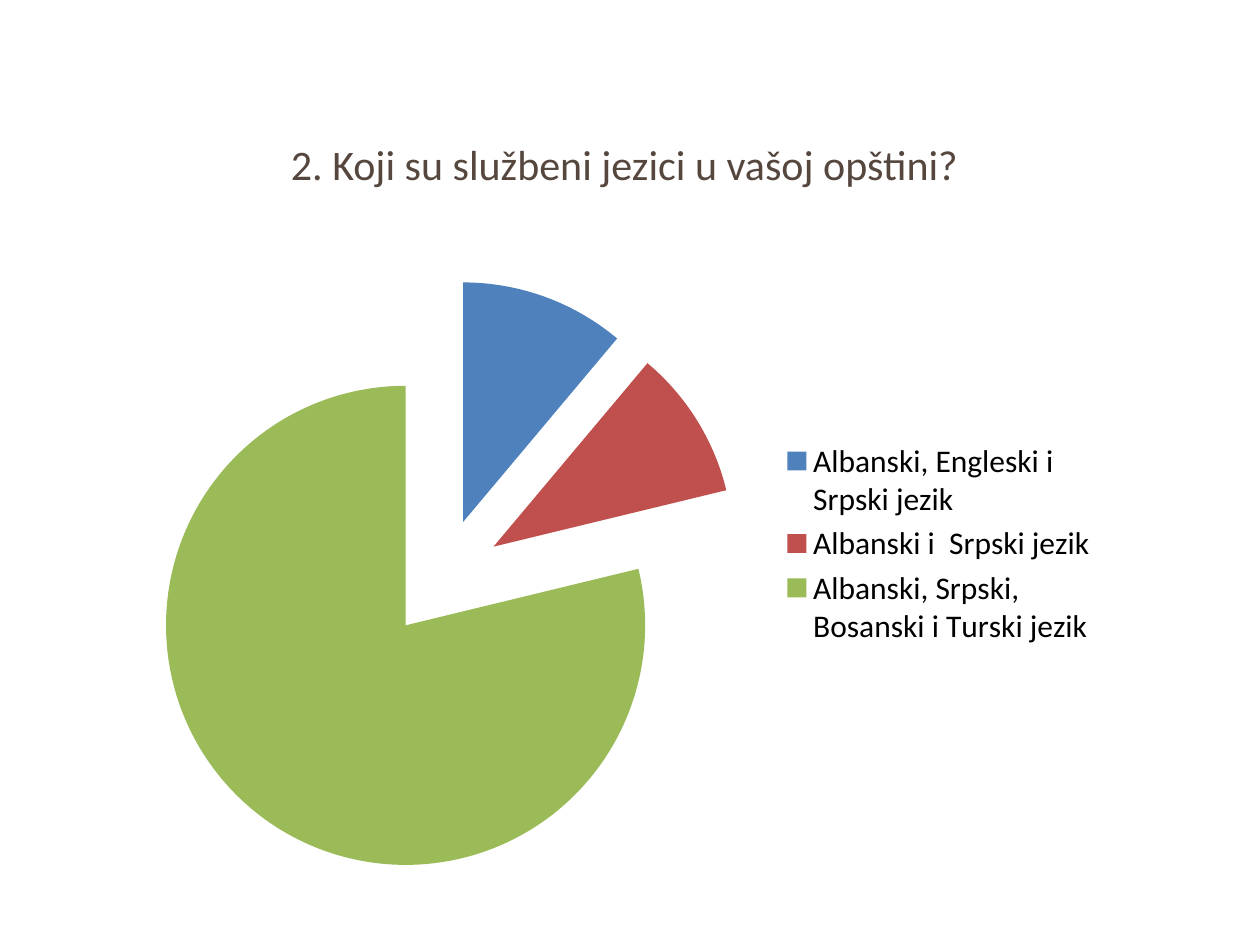
"""Build a survey slide with a question and an exploded pie chart of its answers."""
from pptx import Presentation
from pptx.chart.data import CategoryChartData
from pptx.dml.color import RGBColor
from pptx.enum.chart import XL_CHART_TYPE as ChartType, XL_LEGEND_POSITION as LegendPosition
from pptx.enum.text import MSO_ANCHOR as Anchor, MSO_AUTO_SIZE as AutoSize, PP_ALIGN as Align
from pptx.oxml import parse_xml
from pptx.oxml.ns import nsdecls, qn
from pptx.util import Pt

BROWN = RGBColor(0x55, 0x46, 0x3E)
BLACK = RGBColor(0, 0, 0)
BLUE = RGBColor(0x4F, 0x81, 0xBD)
RED = RGBColor(0xC0, 0x50, 0x4D)
GREEN = RGBColor(0x9B, 0xBB, 0x59)
FONT = "Calibri"
ANSWERS = [
    ("Albanski, Engleski i Srpski jezik ", 11, BLUE),
    ("Albanski i  Srpski jezik ", 10, RED),
    ("Albanski, Srpski, Bosanski i Turski jezik ", 78, GREEN),
]
PLOT = {"x": 0.01, "y": 0.12, "w": 0.61, "h": 0.86}


def set_values(target, values):
    """Set each named attribute of the target."""
    for name, value in values.items():
        setattr(target, name, value)


def explosion():
    """Return an element that moves a slice away from the centre."""
    return parse_xml(f'<c:explosion {nsdecls("c")} val="25"/>')


deck = Presentation()
set_values(deck, {"slide_width": Pt(720), "slide_height": Pt(540)})
page = deck.slides.add_slide(deck.slide_layouts[5])

title = page.shapes.title
set_values(title, {"left": Pt(116), "top": Pt(71.3), "width": Pt(481.7), "height": Pt(39)})
frame = title.text_frame
set_values(frame, {"word_wrap": True, "vertical_anchor": Anchor.TOP,
                   "auto_size": AutoSize.SHAPE_TO_FIT_TEXT})
para = frame.paragraphs[0]
set_values(para, {"alignment": Align.CENTER, "line_spacing": 1.15, "space_after": Pt(15)})
span = para.add_run()
span.text = "2. Koji su službeni jezici u vašoj opštini?"
set_values(span.font, {"name": FONT, "size": Pt(24)})
span.font.color.rgb = BROWN

data = CategoryChartData()
data.categories = [label for label, value, color in ANSWERS]
data.add_series("Series 1", [value for label, value, color in ANSWERS])
chart = page.shapes.add_chart(
    ChartType.PIE, Pt(75.6), Pt(111.6), Pt(563), Pt(398), data).chart
set_values(chart, {"has_title": False, "has_legend": True})
set_values(chart.font, {"name": FONT, "size": Pt(18)})
chart.font.color.rgb = BLACK
set_values(chart.legend, {"position": LegendPosition.RIGHT, "include_in_layout": False})

plot = chart.plots[0]
plot.vary_by_categories = True
series = plot.series[0]
for index, (label, value, color) in enumerate(ANSWERS):
    fill = series.points[index].format.fill
    fill.solid()
    fill.fore_color.rgb = color

slices = series._element.findall(qn("c:dPt"))
slices[0].addprevious(explosion())
for piece in slices:
    piece.find(qn("c:spPr")).addprevious(explosion())

plot_area = chart._chartSpace.chart.plotArea
for old_layout in plot_area.findall(qn("c:layout")):
    plot_area.remove(old_layout)
modes = "".join(f'<c:{axis}Mode val="edge"/>' for axis in "xy")
sizes = "".join(f'<c:{key} val="{value}"/>' for key, value in PLOT.items())
plot_area.insert(0, parse_xml(
    f'<c:layout {nsdecls("c")}><c:manualLayout><c:layoutTarget val="inner"/>'
    f"{modes}{sizes}</c:manualLayout></c:layout>"))

deck.save("out.pptx")
